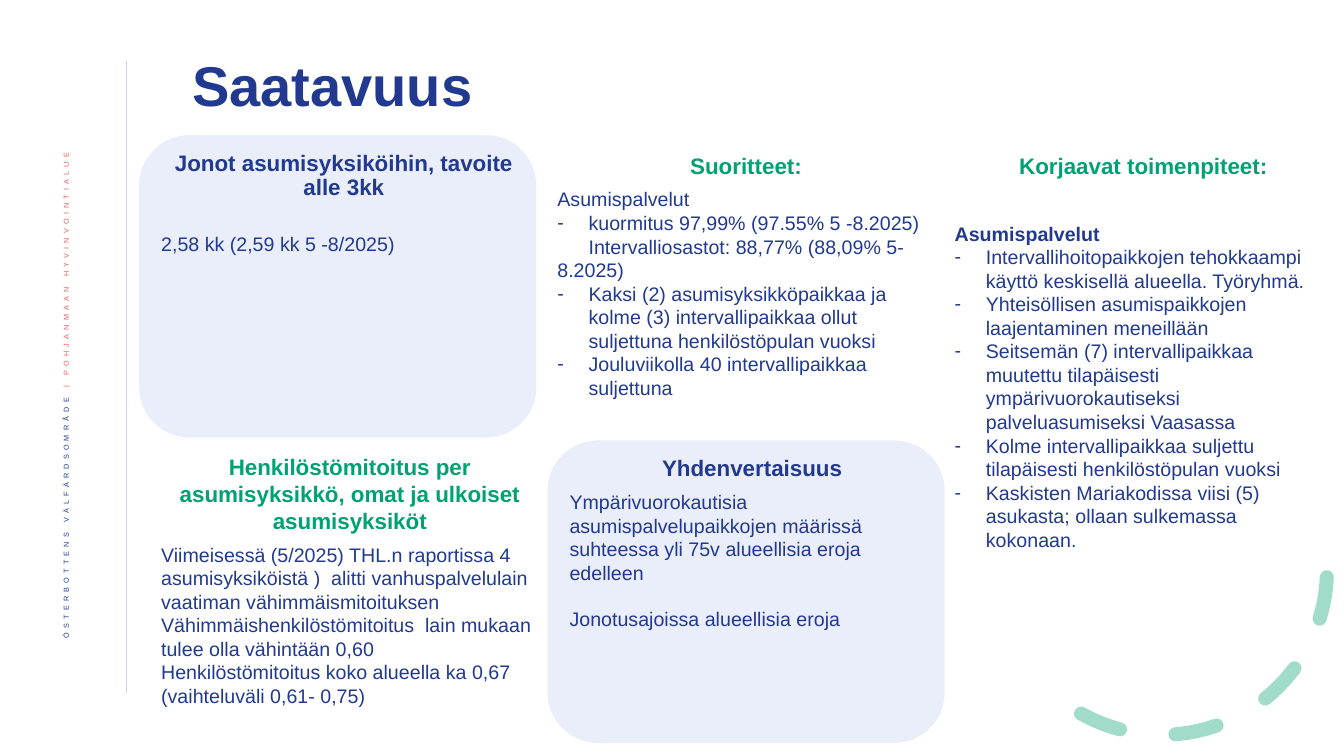
from lxml.etree import SubElement
from pptx import Presentation
from pptx.dml.color import RGBColor
from pptx.enum.dml import MSO_LINE
from pptx.enum.shapes import MSO_CONNECTOR, MSO_SHAPE
from pptx.enum.text import MSO_ANCHOR, PP_ALIGN
from pptx.oxml.ns import qn
from pptx.util import Inches, Pt

# Content
NAVY, GREEN, CORAL, LAVENDER = "213A8F", "00A174", "EB5C5F", "C9D2F2"
TITLE = "Saatavuus"
SIDE_LABEL = [("ÖSTERBOTTENS VÄLFÄRDSOMRÅDE ", NAVY), ("| POHJANMAAN HYVINVOINTIALUE", CORAL)]

# Paragraph styles: bold, left margin, first-line indent (inches), space before (points)
STYLES = {
    "plain": (False, 0, 0, 0),
    "gap": (False, 0, 0, 16.5),
    "subhead": (True, 0, 0, 24.5),
    "inset": (False, 0, 0.31, 0),
    "dash": (False, 0.31, -0.31, 0),
}
PANELS = [
    {"heading": "Jonot asumisyksiköihin, tavoite alle 3kk", "place": (1.38, 1.34), "card": True,
     "body": [("gap", "2,58 kk (2,59 kk 5 -8/2025)")]},
    {"heading": "Suoritteet:", "place": (5.43, 1.46), "card": False,
     "body": [
         ("plain", "Asumispalvelut"),
         ("dash", "kuormitus 97,99% (97.55% 5 -8.2025)"),
         ("inset", "Intervalliosastot: 88,77% (88,09% 5-8.2025)"),
         ("dash", "Kaksi (2) asumisyksikköpaikkaa ja kolme (3) intervallipaikkaa ollut "
                  "suljettuna henkilöstöpulan vuoksi"),
         ("dash", "Jouluviikolla 40 intervallipaikkaa suljettuna")]},
    {"heading": "Korjaavat toimenpiteet:", "place": (9.37, 1.46), "card": False,
     "body": [
         ("subhead", "Asumispalvelut"),
         ("dash", "Intervallihoitopaikkojen tehokkaampi käyttö keskisellä alueella. Työryhmä."),
         ("dash", "Yhteisöllisen asumispaikkojen laajentaminen meneillään"),
         ("dash", "Seitsemän (7) intervallipaikkaa muutettu tilapäisesti "
                  "ympärivuorokautiseksi palveluasumiseksi Vaasassa"),
         ("dash", "Kolme intervallipaikkaa suljettu tilapäisesti henkilöstöpulan vuoksi"),
         ("dash", "Kaskisten Mariakodissa viisi (5) asukasta; ollaan sulkemassa kokonaan.")]},
    {"heading": "Yhdenvertaisuus", "place": (5.43, 4.37), "card": True,
     "body": [
         ("plain", "Ympärivuorokautisia asumispalvelupaikkojen määrissä suhteessa yli 75v "
                   "alueellisia eroja edelleen"),
         ("gap", "Jonotusajoissa alueellisia eroja")]},
    {"heading": "Henkilöstömitoitus per asumisyksikkö, omat ja ulkoiset asumisyksiköt",
     "place": (1.5, 4.45), "card": False,
     "body": [
         ("plain", "Viimeisessä (5/2025) THL.n raportissa 4 asumisyksiköistä )  alitti "
                   "vanhuspalvelulain vaatiman vähimmäismitoituksen"),
         ("plain", "Vähimmäishenkilöstömitoitus  lain mukaan tulee olla vähintään 0,60"),
         ("plain", "Henkilöstömitoitus koko alueella ka 0,67 (vaihteluväli 0,61- 0,75)")]},
]
PANEL_WIDTH, PANEL_HEIGHT, CARD_HEIGHT, CARD_PAD = 3.94, 2.6, 3, 0.12

presentation = Presentation()
presentation.slide_width, presentation.slide_height = Inches(13.33), Inches(7.5)
slide = presentation.slides.add_slide(presentation.slide_layouts[6])


def paint(color_format, hex_color):
    color_format.rgb = RGBColor.from_string(hex_color)


def set_alpha(properties, percent):
    color = next(properties.iter(qn("a:srgbClr")))
    SubElement(color, qn("a:alpha")).set("val", str(percent * 1000))


def add_text(left, top, width, height, anchor=MSO_ANCHOR.TOP):
    frame = slide.shapes.add_textbox(*map(Inches, (left, top, width, height))).text_frame
    frame.word_wrap = True
    frame.vertical_anchor = anchor
    return frame


def write(paragraph, text, color, size, bold=False, **layout):
    for name, value in layout.items():
        setattr(paragraph, name, value)
    run = paragraph.add_run()
    run.text = text
    for name, value in {"name": "Arial", "size": Pt(size), "bold": bold}.items():
        setattr(run.font, name, value)
    paint(run.font.color, color)
    return run


def write_body(paragraph, style, text):
    bold, margin, indent, before = STYLES[style]
    properties = paragraph._p.get_or_add_pPr()
    properties.set("marL", str(Inches(margin)))
    properties.set("indent", str(Inches(indent)))
    if style == "dash":
        SubElement(properties, qn("a:buFont")).set("typeface", "Arial")
        SubElement(properties, qn("a:buChar")).set("char", "-")
    write(paragraph, text, NAVY, 14, bold, **({"space_before": Pt(before)} if before else {}))


# Side rule and vertical label
rule = slide.shapes.add_connector(MSO_CONNECTOR.STRAIGHT, *map(Inches, (1.25, 0.61, 1.25, 6.88)))
paint(rule.line.color, LAVENDER)
rule.line.width = Pt(0.5)
SubElement(rule._element.spPr, qn("a:effectLst"))

side = add_text(0.42, 1.42, 0.52, 5.73, MSO_ANCHOR.MIDDLE)
side._txBody.bodyPr.set("vert", "vert270")
for text, color in SIDE_LABEL:
    run = write(side.paragraphs[0], text, color, 9, alignment=PP_ALIGN.RIGHT, line_spacing=0.9)
    for name, value in {"baseline": "30000", "spc": "300"}.items():
        run.font._element.set(name, value)

# Dashed arc in the lower right corner
arc = slide.shapes.add_shape(MSO_SHAPE.ARC, *map(Inches, (9.89, 4.02, 3.27, 3.27)))
arc.shadow.inherit = False
arc.rotation = 98.9
for index, adjustment in enumerate((158.17, 17.81)):
    arc.adjustments[index] = adjustment
arc.fill.background()
paint(arc.line.color, GREEN)
arc.line.width = Pt(10)
arc.line.dash_style = MSO_LINE.DASH
arc_line = arc._element.spPr.find(qn("a:ln"))
arc_line.set("cap", "rnd")
set_alpha(arc_line, 36)

# Title
title = add_text(1.81, 0.45, 10.2, 0.85, MSO_ANCHOR.MIDDLE)
write(title.paragraphs[0], TITLE, NAVY, 40, True, line_spacing=0.9)

# Panels, two of them on rounded cards
for panel in PANELS:
    left, top = panel["place"]
    width, color, spacing = PANEL_WIDTH, GREEN, 1.0
    if panel["card"]:
        card = slide.shapes.add_shape(
            MSO_SHAPE.ROUNDED_RECTANGLE, *map(Inches, (left, top, PANEL_WIDTH, CARD_HEIGHT)))
        card.shadow.inherit = False
        card.fill.solid()
        paint(card.fill.fore_color, LAVENDER)
        set_alpha(card._element.spPr, 38)
        card.line.fill.background()
        left, top, width = left + CARD_PAD, top + CARD_PAD, width - CARD_PAD
        color, spacing = NAVY, 0.9
    frame = add_text(left, top, width, PANEL_HEIGHT)
    write(frame.paragraphs[0], panel["heading"], color, 16, True,
          alignment=PP_ALIGN.CENTER, line_spacing=spacing, space_after=Pt(6))
    for style, text in panel["body"]:
        write_body(frame.add_paragraph(), style, text)

presentation.save("out.pptx")
